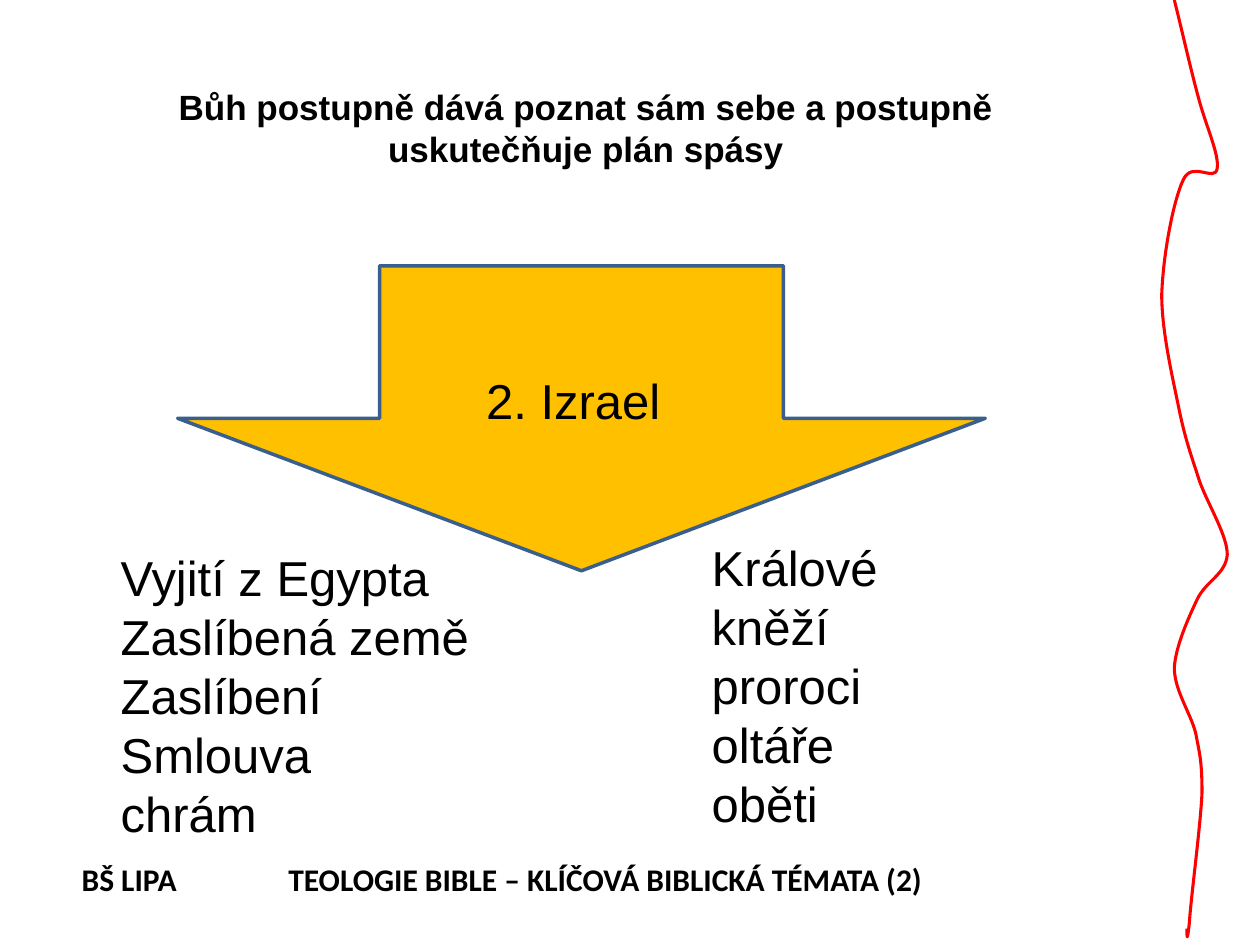
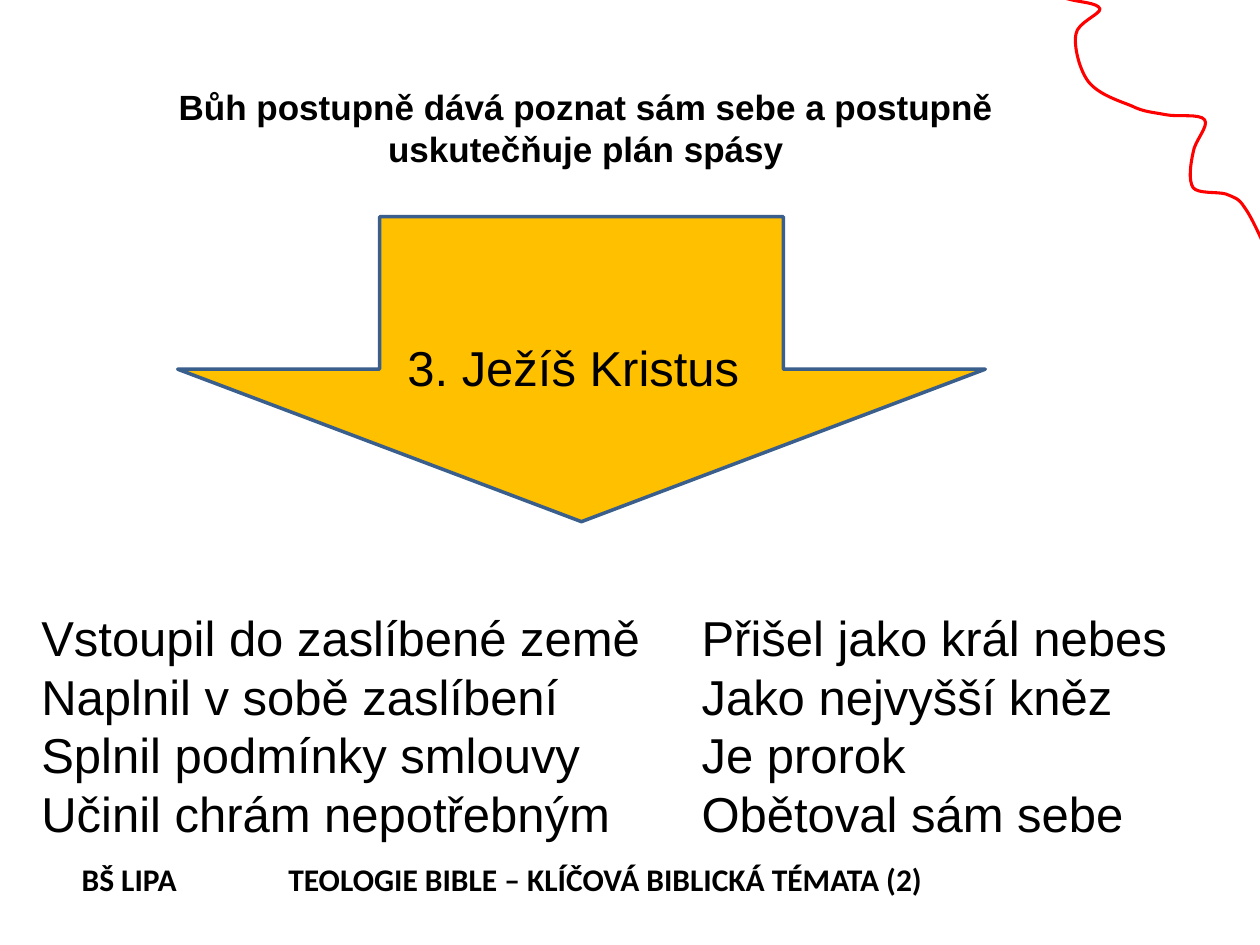
import pptx
import pptx.dml.color
import pptx.enum.shapes
import pptx.enum.text
import pptx.oxml
import pptx.oxml.ns
import pptx.util
from dataclasses import dataclass

Inches = pptx.util.Inches
Pt = pptx.util.Pt
RGBColor = pptx.dml.color.RGBColor


@dataclass(frozen=True)
class Theme:
    text = RGBColor(0x00, 0x00, 0x00)
    curve = RGBColor(0xFF, 0x00, 0x00)
    arrow_fill = RGBColor(0xFF, 0xC0, 0x00)
    arrow_line = RGBColor(0x3A, 0x5F, 0x8C)
    body_font = "Arial"
    footer_font = "Calibri"
    title_size = Pt(20)
    body_size = Pt(28)
    footer_size = Pt(18)
    arrow_weight = Pt(2)
    curve_weight = Pt(1.75)


theme = Theme()
CENTER = pptx.enum.text.PP_ALIGN.CENTER
LEFT = pptx.enum.text.PP_ALIGN.LEFT


def add_text(slide, box, lines, size, font=theme.body_font, bold=False, align=LEFT, wrap=True):
    """Add a text box with one paragraph per line and return its text frame."""
    frame = slide.shapes.add_textbox(*map(Inches, box)).text_frame
    frame.word_wrap = wrap
    frame.auto_size = pptx.enum.text.MSO_AUTO_SIZE.SHAPE_TO_FIT_TEXT
    frame.text = "\n".join(lines)
    for paragraph in frame.paragraphs:
        paragraph.alignment = align
        paragraph.font.name = font
        paragraph.font.size = size
        paragraph.font.bold = bold
        paragraph.font.color.rgb = theme.text
    return frame


def add_curve(slide, points):
    """Draw an open Bézier line: a start point, then three points per segment."""
    emu_points = [(Inches(x), Inches(y)) for x, y in points]
    builder = slide.shapes.build_freeform(*emu_points[0])
    builder.add_line_segments(emu_points[1:], close=False)
    shape = builder.convert_to_shape()
    shape.shadow.inherit = False
    shape.fill.background()
    shape.line.color.rgb = theme.curve
    shape.line.width = theme.curve_weight

    # Join every three straight steps into one cubic segment
    outline = shape.element.find(".//" + pptx.oxml.ns.qn("a:path"))
    steps = outline.findall(pptx.oxml.ns.qn("a:lnTo"))
    for first in range(0, len(steps), 3):
        segment = outline.makeelement(pptx.oxml.ns.qn("a:cubicBezTo"))
        outline.append(segment)
        for step in steps[first:first + 3]:
            segment.append(step[0])
            outline.remove(step)


TITLE = "Bůh postupně dává poznat sám sebe a postupně uskutečňuje plán spásy"
FOOTER = "BŠ LIPA\tTEOLOGIE BIBLE – KLÍČOVÁ BIBLICKÁ TÉMATA (2)"
FOOTER_TAB = Inches(1.64)

slides = [
    {
        "arrow_top": 2.11,
        "label": ("2. Izrael", (3.75, 2.89, 1.6, 0.57)),
        "columns": [
            ((0.86, 4.3, 3.83, 2.46),
             ["Vyjití z Egypta", "Zaslíbená země", "Zaslíbení", "Smlouva", "chrám"]),
            ((5.55, 4.22, 3.59, 2.46),
             ["Králové", "kněží", "proroci", "oltáře", "oběti"]),
        ],
        "curve": [
            (9.32, 0),
            (9.39, 0.28), (9.45, 0.55), (9.51, 0.77),
            (9.57, 1), (9.68, 1.23), (9.66, 1.34),
            (9.64, 1.45), (9.46, 1.27), (9.39, 1.43),
            (9.31, 1.6), (9.23, 2.03), (9.22, 2.34),
            (9.22, 2.64), (9.31, 3.01), (9.36, 3.26),
            (9.41, 3.5), (9.46, 3.63), (9.52, 3.82),
            (9.59, 4.01), (9.74, 4.25), (9.74, 4.4),
            (9.73, 4.56), (9.57, 4.61), (9.5, 4.76),
            (9.43, 4.91), (9.33, 5.13), (9.32, 5.3),
            (9.32, 5.48), (9.45, 5.66), (9.49, 5.82),
            (9.52, 5.98), (9.54, 6.04), (9.54, 6.29),
            (9.53, 6.54), (9.45, 7.14), (9.44, 7.32),
            (9.42, 7.5), (9.42, 7.43), (9.42, 7.37),
        ],
    },
    {
        "arrow_top": 1.72,
        "label": ("3. Ježíš Kristus", (3.12, 2.63, 2.86, 0.57)),
        "columns": [
            ((0.23, 4.77, 5.55, 1.99),
             ["Vstoupil do zaslíbené země", "Naplnil v sobě zaslíbení",
              "Splnil podmínky smlouvy", "Učinil chrám nepotřebným"]),
            ((5.47, 4.77, 4.61, 1.99),
             ["Přišel jako král nebes", "Jako nejvyšší kněz", "Je prorok", "Obětoval sám sebe"]),
        ],
        "curve": [
            (8.13, -0.12),
            (8.25, -0.08), (8.37, -0.04), (8.47, -0.01),
            (8.57, 0.02), (8.71, 0.02), (8.73, 0.07),
            (8.74, 0.11), (8.55, 0.18), (8.54, 0.27),
            (8.52, 0.37), (8.57, 0.56), (8.64, 0.65),
            (8.72, 0.75), (8.88, 0.8), (8.98, 0.84),
            (9.08, 0.89), (9.15, 0.89), (9.25, 0.91),
            (9.35, 0.93), (9.52, 0.9), (9.56, 0.95),
            (9.6, 1), (9.48, 1.12), (9.47, 1.21),
            (9.45, 1.3), (9.43, 1.43), (9.47, 1.49),
            (9.51, 1.54), (9.66, 1.52), (9.73, 1.54),
            (9.8, 1.57), (9.83, 1.57), (9.88, 1.65),
            (9.94, 1.73), (10.04, 1.96), (10.07, 2.03),
            (10.1, 2.1), (10.08, 2.07), (10.07, 2.05),
        ],
    },
]

presentation = pptx.Presentation()
presentation.slide_width = Inches(10)
presentation.slide_height = Inches(7.5)

for content in slides:
    slide = presentation.slides.add_slide(presentation.slide_layouts[6])

    # Arrow
    arrow = slide.shapes.add_shape(
        pptx.enum.shapes.MSO_SHAPE.DOWN_ARROW,
        Inches(1.41), Inches(content["arrow_top"]), Inches(6.41), Inches(2.42))
    arrow.shadow.inherit = False
    arrow.fill.solid()
    arrow.fill.fore_color.rgb = theme.arrow_fill
    arrow.line.color.rgb = theme.arrow_line
    arrow.line.width = theme.arrow_weight

    # Title, arrow label and the two columns
    add_text(slide, (0.55, 0.63, 8.2, 0.77), [TITLE], theme.title_size, bold=True, align=CENTER)
    label, label_box = content["label"]
    add_text(slide, label_box, [label], theme.body_size, align=CENTER, wrap=False)
    for column_box, lines in content["columns"]:
        add_text(slide, column_box, lines, theme.body_size)

    # Red line at the right edge
    add_curve(slide, content["curve"])

    # Footer with a tab stop between school and course
    footer = add_text(slide, (0.55, 6.78, 7.27, 0.4), [FOOTER], theme.footer_size,
                      font=theme.footer_font, bold=True)
    tab_list = pptx.oxml.parse_xml(
        f'<a:tabLst {pptx.oxml.ns.nsdecls("a")}><a:tab pos="{FOOTER_TAB}" algn="l"/></a:tabLst>')
    footer.paragraphs[0]._p.get_or_add_pPr().insert(0, tab_list)

presentation.save("out.pptx")
